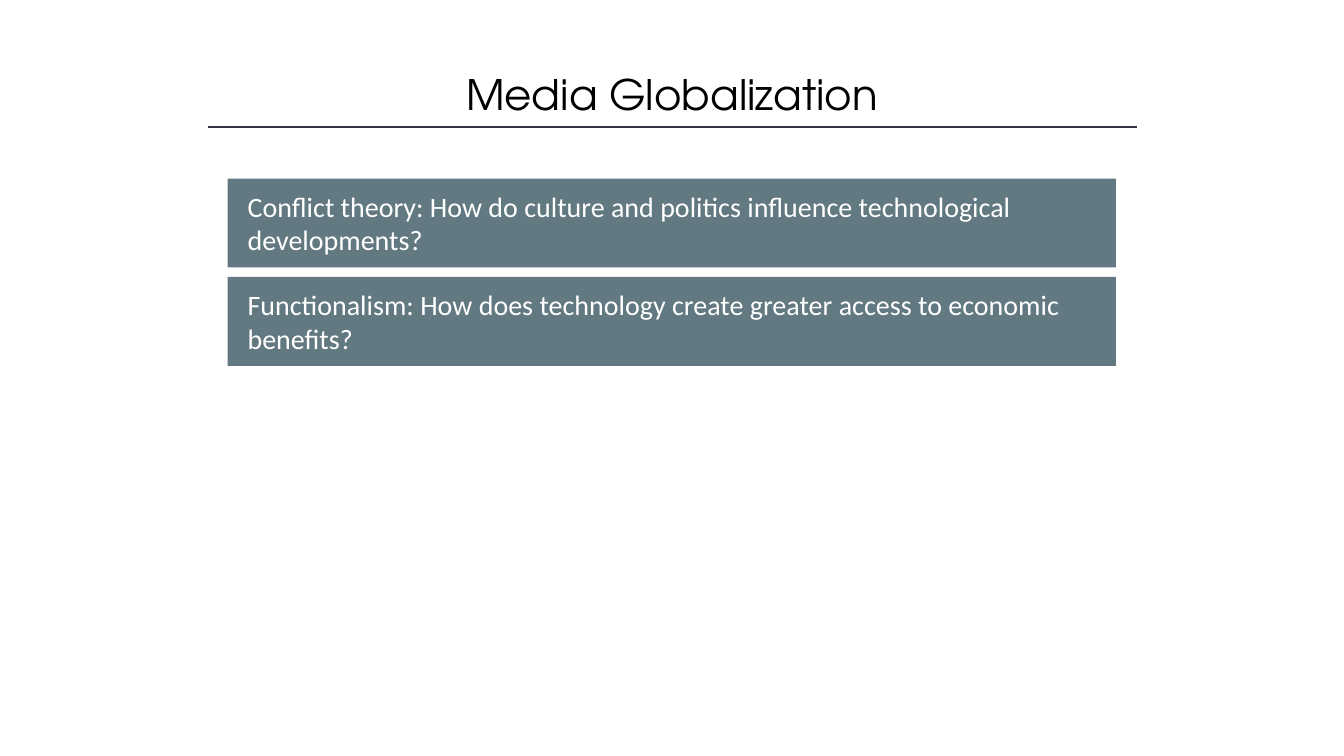
from dataclasses import dataclass

from lxml.etree import SubElement
from pptx import Presentation
from pptx.dml.color import RGBColor
from pptx.enum.shapes import MSO_CONNECTOR, MSO_SHAPE
from pptx.enum.text import MSO_ANCHOR, PP_ALIGN
from pptx.oxml.ns import qn
from pptx.shapes.autoshape import Shape
from pptx.slide import Slide
from pptx.util import Cm, Pt


@dataclass(frozen=True)
class Theme:
    ink: RGBColor = RGBColor(0x00, 0x00, 0x00)
    rule: RGBColor = RGBColor(0x32, 0x35, 0x42)
    panel: RGBColor = RGBColor(0x62, 0x79, 0x81)
    paper: RGBColor = RGBColor(0xFF, 0xFF, 0xFF)
    title_font: str = "TeX Gyre Adventor"
    body_font: str = "Calibri"
    title_size: Pt = Pt(30)
    body_size: Pt = Pt(20)
    rule_width: Pt = Pt(1)


@dataclass(frozen=True)
class Area:
    """A rectangle in centimetres."""
    left: float
    top: float
    width: float
    height: float

    def lengths(self) -> tuple[Cm, Cm, Cm, Cm]:
        return Cm(self.left), Cm(self.top), Cm(self.width), Cm(self.height)


THEME = Theme()
TITLE_AREA = Area(4.24, 1.6, 25.4, 1.55)
RULE_LEFT, RULE_RIGHT, RULE_TOP = 5.23, 28.65, 3.2
FIRST_PANEL = Area(5.74, 4.5, 22.38, 2.24)
PANEL_PITCH = 2.48
LABEL_INSET = Area(0.25, 0.14, 21.69, 1.96)
QUESTIONS = (
    "Conflict theory: How do culture and politics influence technological developments?",
    "Functionalism: How does technology create greater access to economic benefits?",
)


def write_text(box: Shape, text: str, align: PP_ALIGN, font: dict) -> None:
    frame = box.text_frame
    frame_format = {
        "word_wrap": True,
        "vertical_anchor": MSO_ANCHOR.TOP,
        "margin_left": Cm(0.25),
        "margin_right": Cm(0.25),
        "margin_top": Cm(0.13),
        "margin_bottom": Cm(0.13),
    }
    for name, value in frame_format.items():
        setattr(frame, name, value)
    para = frame.paragraphs[0]
    para.alignment = align
    span = para.add_run()
    span.text = text
    color = font["color"]
    for name in ("name", "size", "bold"):
        setattr(span.font, name, font[name])
    span.font.color.rgb = color


def add_title(page: Slide) -> None:
    title = page.shapes.title
    title.left, title.top, title.width, title.height = TITLE_AREA.lengths()
    write_text(title, "Media Globalization", PP_ALIGN.CENTER, {
        "name": THEME.title_font, "size": THEME.title_size,
        "bold": False, "color": THEME.ink,
    })


def add_rule(page: Slide) -> None:
    rule = page.shapes.add_connector(
        MSO_CONNECTOR.STRAIGHT,
        Cm(RULE_LEFT), Cm(RULE_TOP), Cm(RULE_RIGHT), Cm(RULE_TOP),
    )
    rule.line.color.rgb = THEME.rule
    rule.line.width = THEME.rule_width
    SubElement(rule._element.spPr, qn("a:effectLst"))


def add_block(page: Slide, area: Area) -> Shape:
    block = page.shapes.add_shape(MSO_SHAPE.RECTANGLE, *area.lengths())
    block.shadow.inherit = False
    block.fill.solid()
    block.fill.fore_color.rgb = THEME.panel
    block.line.fill.background()
    return block


def add_question(page: Slide, index: int, text: str) -> None:
    top = FIRST_PANEL.top + index * PANEL_PITCH
    add_block(page, Area(FIRST_PANEL.left, top, FIRST_PANEL.width, FIRST_PANEL.height))
    label = add_block(page, Area(
        FIRST_PANEL.left + LABEL_INSET.left, top + LABEL_INSET.top,
        LABEL_INSET.width, LABEL_INSET.height,
    ))
    write_text(label, text, PP_ALIGN.LEFT, {
        "name": THEME.body_font, "size": THEME.body_size,
        "bold": False, "color": THEME.paper,
    })


def main() -> None:
    deck = Presentation()
    deck.slide_width, deck.slide_height = Cm(33.87), Cm(19.05)
    page = deck.slides.add_slide(deck.slide_layouts[5])

    # Heading with the line below it
    add_title(page)
    add_rule(page)

    # Stacked question panels
    for index, question in enumerate(QUESTIONS):
        add_question(page, index, question)

    deck.save("out.pptx")


if __name__ == "__main__":
    main()
